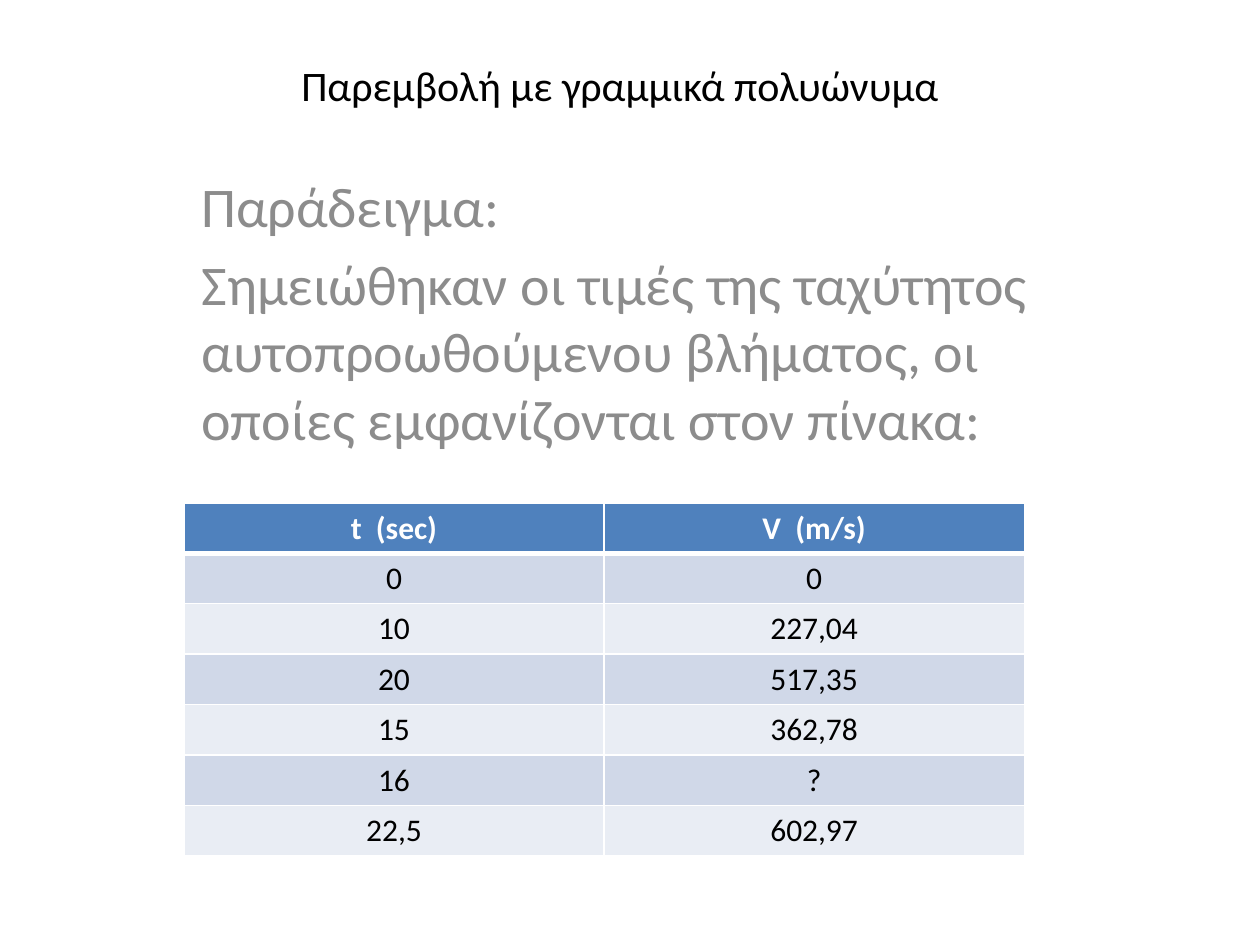
from dataclasses import dataclass

from lxml import etree
from pptx import Presentation
from pptx.dml.color import RGBColor
from pptx.enum.text import MSO_ANCHOR, PP_ALIGN
from pptx.oxml.ns import qn
from pptx.util import Inches, Pt

LEFT, CENTER = PP_ALIGN.LEFT, PP_ALIGN.CENTER
TOP, MIDDLE = MSO_ANCHOR.TOP, MSO_ANCHOR.MIDDLE
FONT = "Calibri"
COLORS = {
    "black": "000000",
    "white": "FFFFFF",
    "gray": "8C8C8C",
    "head": "4F81BD",
    "odd": "D0D8E8",
    "even": "E9EDF4",
}
ROWS = [
    ("t  (sec)", "V  (m/s)"),
    ("0", "0"),
    ("10", "227,04"),
    ("20", "517,35"),
    ("15", "362,78"),
    ("16", "?"),
    ("22,5", "602,97"),
]


@dataclass
class Style:
    size: float
    color: str
    align: PP_ALIGN = CENTER
    bold: bool = False
    before: float = 0


@dataclass
class Block:
    left: float
    top: float
    width: float
    height: float
    anchor: MSO_ANCHOR
    style: Style
    lines: list[str]


BLOCKS = [
    Block(0.67, 0.36, 8.5, 0.63, MIDDLE, Style(24, "black"),
          ["Παρεμβολή με γραμμικά πολυώνυμα"]),
    Block(1.5, 1.31, 7, 2.44, TOP, Style(32, "gray", LEFT, before=6.4),
          ["Παράδειγμα:",
           "Σημειώθηκαν οι τιμές της ταχύτητος αυτοπροωθούμενου βλήματος, "
           "οι οποίες εμφανίζονται στον πίνακα:"]),
]


def write(para, text: str, style: Style) -> None:
    para.alignment = style.align
    para.space_before = Pt(style.before)
    run = para.add_run()
    run.text = text
    font = run.font
    font.name, font.size, font.bold = FONT, Pt(style.size), style.bold
    font.color.rgb = RGBColor.from_string(COLORS[style.color])


def add_block(slide, block: Block) -> None:
    box = slide.shapes.add_textbox(Inches(block.left), Inches(block.top),
                                   Inches(block.width), Inches(block.height))
    frame = box.text_frame
    frame.word_wrap = True
    frame.vertical_anchor = block.anchor
    for i, line in enumerate(block.lines):
        para = frame.add_paragraph() if i else frame.paragraphs[0]
        write(para, line, block.style)


def add_edges(cell, top: float, bottom: float) -> None:
    """Give the cell white borders; call before its fill is set."""
    props = cell._tc.get_or_add_tcPr()
    for side, width in zip("LRTB", (1, 1, top, bottom)):
        line = etree.SubElement(props, qn(f"a:ln{side}"), w=str(Pt(width)))
        fill = etree.SubElement(line, qn("a:solidFill"))
        etree.SubElement(fill, qn("a:srgbClr"), val=COLORS["white"])


def add_grid(slide) -> None:
    table = slide.shapes.add_table(len(ROWS), len(ROWS[0]), Inches(1.46), Inches(3.99),
                                   Inches(6.67), Inches(2.8)).table
    for r, row in enumerate(ROWS):
        head = r == 0
        band = "head" if head else "odd" if r % 2 else "even"
        style = Style(18, "white" if head else "black", bold=head)
        for c, text in enumerate(row):
            cell = table.cell(r, c)
            add_edges(cell, 3 if r == 1 else 1, 3 if head else 1)
            cell.fill.solid()
            cell.fill.fore_color.rgb = RGBColor.from_string(COLORS[band])
            write(cell.text_frame.paragraphs[0], text, style)


def main() -> None:
    deck = Presentation()
    deck.slide_width, deck.slide_height = Inches(10), Inches(7.5)
    slide = deck.slides.add_slide(deck.slide_layouts[6])
    for block in BLOCKS:
        add_block(slide, block)
    add_grid(slide)
    deck.save("out.pptx")


if __name__ == "__main__":
    main()
